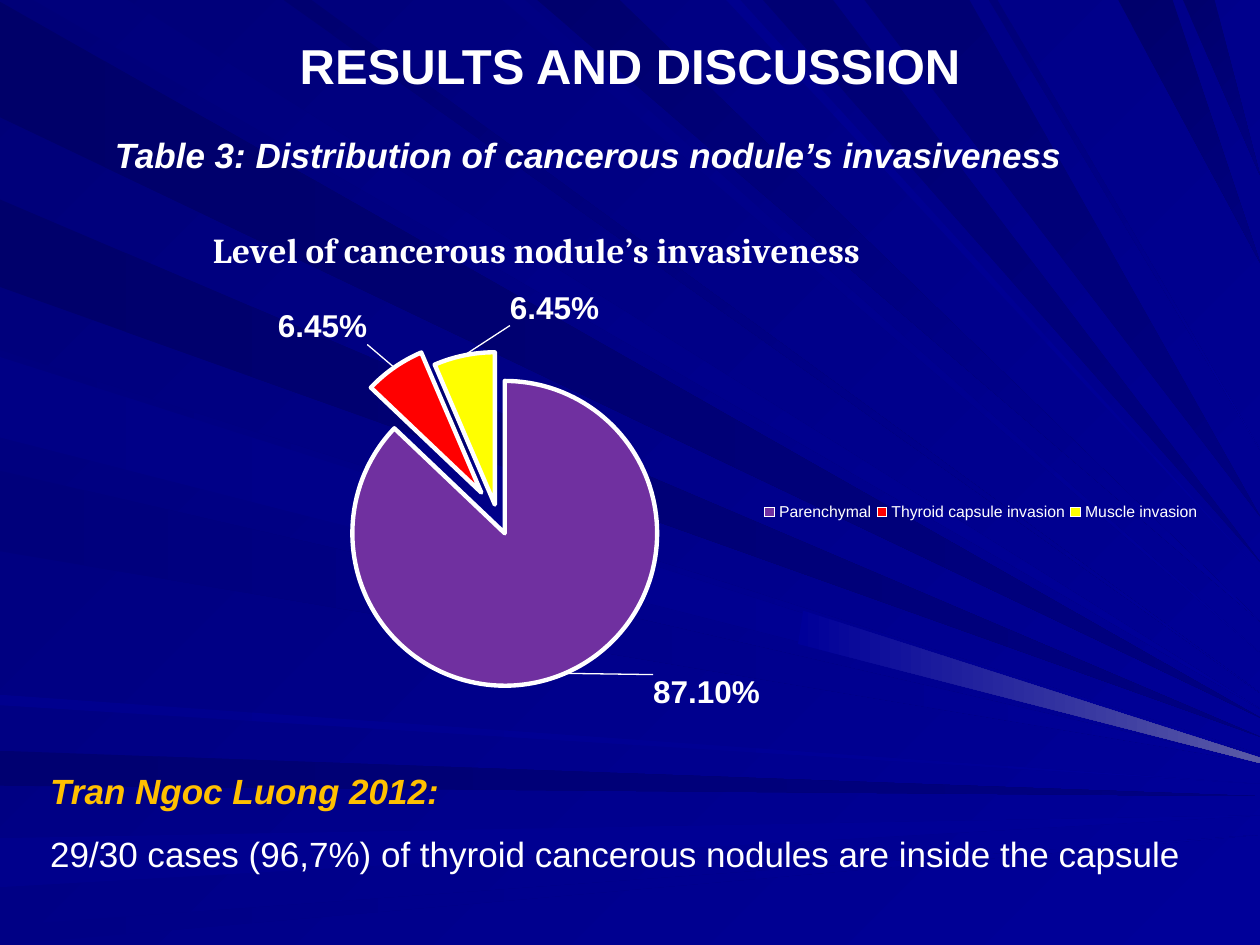
from lxml import etree
from pptx import Presentation
from pptx.chart.data import CategoryChartData as ChartData
from pptx.dml.color import RGBColor
from pptx.enum.chart import XL_CHART_TYPE as ChartType
from pptx.enum.chart import XL_LABEL_POSITION as LabelPosition
from pptx.enum.chart import XL_LEGEND_POSITION as LegendPosition
from pptx.enum.text import MSO_ANCHOR as Anchor
from pptx.enum.text import PP_ALIGN as Align
from pptx.oxml import parse_xml
from pptx.oxml.ns import qn
from pptx.util import Pt

WHITE = "FFFFFF"
NAVY, BLUE = "000080", "000099"
WIDTH, HEIGHT = 720, 540
LEFT_RAYS = [
    (1, 67, 410, "000069", NAVY),
    (114, 164, 421, "00006B", NAVY),
    (200, 246, 431, "00007E", BLUE),
    (269, 315, 436, "00007B", BLUE),
    (397, 403, 448, "00008E", BLUE),
    (429, 449, 455, "000071", NAVY),
    (479, 507, 466, "00008C", BLUE),
    (529, 540, 477, "000085", BLUE),
    (204, 250, 434, "000085", BLUE),
]
TOP_RAYS = [
    (19, 73, 405, "00007B", BLUE),
    (162, 178, 396, "000070", BLUE),
    (287, 300, 373, "000083", BLUE),
    (307, 354, 355, "00006D", BLUE),
    (415, 423, 327, "00008E", BLUE),
    (436, 476, 321, "000073", NAVY),
    (494, 554, 295, "000073", NAVY),
    (565, 570, 257, "000078", BLUE),
    (639, 670, 150, "00006B", NAVY),
    (676, 694, 100, "00006D", NAVY),
]
BEAM = [(456, 368), (459, 349), (720, 433), (720, 436)]
SLICES = [
    ("Parenchymal", 0.871, "7030A0", 13, (0.075, -0.01)),
    ("Thyroid capsule invasion", 0.0645, "FF0000", 18, (-0.02, -0.03)),
    ("Muscle invasion", 0.0645, "FFFF00", 7, (0.12, -0.04)),
]


def color(value):
    """Turn a hex string into a colour."""
    return RGBColor.from_string(value)


def paint(fill, start, end=None, angle=0):
    """Fill with one colour, or with a gradient turned clockwise by angle."""
    if end is None:
        fill.solid()
        fill.fore_color.rgb = color(start)
        return
    fill.gradient()
    fill.gradient_angle = (360 - angle) % 360
    for stop, value in zip(fill.gradient_stops, (start, end)):
        stop.color.rgb = color(value)


def style(font, size, name="Arial", value=WHITE, bold=False, italic=False):
    """Set all the properties of a font."""
    font.size, font.name, font.bold, font.italic = Pt(size), name, bold, italic
    font.color.rgb = color(value)


def add_ray(shapes, points, start, end, angle=0):
    """Draw one light ray of the backdrop."""
    builder = shapes.build_freeform(*points[0], scale=Pt(1))
    builder.add_line_segments(points[1:], close=True)
    ray = builder.convert_to_shape()
    ray.shadow.inherit = False
    ray.line.fill.background()
    paint(ray.fill, start, end, angle)


def add_backdrop(page):
    """Draw rays that narrow from the left and top edges to the right edge."""
    paint(page.background.fill, "000078", BLUE, 45)
    shapes = page.shapes.add_group_shape().shapes
    for near, far, tip, start, end in TOP_RAYS:
        add_ray(shapes, [(near, 0), (far, 0), (WIDTH, tip)], start, end, 45)
    for near, far, tip, start, end in LEFT_RAYS:
        add_ray(shapes, [(0, near), (0, far), (WIDTH, tip)], start, end)
    add_ray(shapes, BEAM, BLUE, "5A5AA6")


def add_text(page, place, lines, align=Align.LEFT, spacing=1.0, anchor=Anchor.TOP, bottom=3.6):
    """Add a text box with one styled paragraph for each line."""
    box = page.shapes.add_textbox(*map(Pt, place))
    frame = box.text_frame
    frame.word_wrap = True
    frame.vertical_anchor = anchor
    frame.margin_bottom = Pt(bottom)
    frame.text = "\n".join(text for text, _ in lines)
    for para, (_, look) in zip(frame.paragraphs, lines):
        para.alignment, para.line_spacing = align, spacing
        style(para.runs[0].font, **look)


def chart_xml(tag, **attributes):
    """Make an empty chart element."""
    element = etree.Element(qn(f"c:{tag}"))
    for name, value in attributes.items():
        element.set(name, str(value))
    return element


def set_layout(parent, index, **values):
    """Give a chart part a manual layout as its child at index."""
    for old in parent.findall(qn("c:layout")):
        parent.remove(old)
    layout = chart_xml("layout")
    manual = chart_xml("manualLayout")
    layout.append(manual)
    for tag, value in values.items():
        manual.append(chart_xml(tag, val=value))
    parent.insert(index, layout)


def add_leader_lines(labels):
    """Show thin white lines from the labels to their slices."""
    for old in labels.findall(qn("c:showLeaderLines")):
        labels.remove(old)
    labels.append(chart_xml("showLeaderLines", val=1))
    labels.append(parse_xml(
        '<c:leaderLines xmlns:c="http://schemas.openxmlformats.org/drawingml/2006/chart" '
        'xmlns:a="http://schemas.openxmlformats.org/drawingml/2006/main"><c:spPr><a:ln w="9525">'
        f'<a:solidFill><a:srgbClr val="{WHITE}"/></a:solidFill></a:ln></c:spPr></c:leaderLines>'))


def style_labels(labels):
    """Show the values in large bold type."""
    labels.show_value = True
    labels.number_format = "0.00%"
    labels.number_format_is_linked = False
    labels.position = LabelPosition.BEST_FIT
    style(labels.font, 18, bold=True)


def style_slices(series, root):
    """Colour the slices, pull them out and move their labels."""
    for index, (_, _, value, _, _) in enumerate(SLICES):
        point = series.points[index]
        paint(point.format.fill, value)
        point.format.line.width = Pt(2.5)
        point.format.line.color.rgb = color(WHITE)
        style(point.data_label.font, 18, bold=True)
        point.data_label.position = LabelPosition.BEST_FIT
    parts = zip(SLICES, root.iter(qn("c:dPt")), root.iter(qn("c:dLbl")))
    for (*_, explosion, (x, y)), part, label in parts:
        part.find(qn("c:spPr")).addprevious(chart_xml("explosion", val=explosion))
        set_layout(label, 1, x=x, y=y)


def add_pie(page, place):
    """Add the pie chart of invasiveness."""
    data = ChartData(number_format="0.00%")
    data.categories = [name for name, *_ in SLICES]
    data.add_series("Series 1", [share for _, share, *_ in SLICES])
    chart = page.shapes.add_chart(ChartType.PIE, *map(Pt, place), data).chart
    style(chart.font, 10)
    chart.has_title = True
    chart.chart_title.text_frame.text = "Level of cancerous nodule’s invasiveness"
    style(chart.chart_title.text_frame.paragraphs[0].runs[0].font, 20, "Cambria", bold=True)
    chart.has_legend = True
    chart.legend.position = LegendPosition.RIGHT
    chart.legend.include_in_layout = False
    style(chart.legend.font, 9)

    plot, root = chart.plots[0], chart.element
    plot.vary_by_categories = True
    series = plot.series[0]
    style_labels(series.data_labels)
    style_slices(series, root)
    add_leader_lines(root.find(f".//{qn('c:ser')}/{qn('c:dLbls')}"))
    edges = {"xMode": "edge", "yMode": "edge"}
    set_layout(root.find(f".//{qn('c:title')}"), 1, **edges, x=0.125, y=0.06)
    set_layout(root.find(f".//{qn('c:legend')}"), 1, **edges, x=0.61, y=0.55, w=0.39, h=0.05)
    set_layout(root.find(f".//{qn('c:plotArea')}"), 0, layoutTarget="inner", **edges,
               x=0.09, y=0.31, w=0.58, h=0.54)


def main():
    """Build and save the slide."""
    deck = Presentation()
    deck.slide_width, deck.slide_height = Pt(WIDTH), Pt(HEIGHT)
    page = deck.slides.add_slide(deck.slide_layouts[6])
    add_backdrop(page)
    add_text(page, (0, 0, WIDTH, 104.4), [("RESULTS AND DISCUSSION", {"size": 28, "bold": True})],
             Align.CENTER, anchor=Anchor.MIDDLE, bottom=34)
    emphasis = {"size": 20, "bold": True, "italic": True}
    add_text(page, (42.5, 72.7, 587.5, 31.7),
             [("Table 3: Distribution of cancerous nodule’s invasiveness", emphasis)],
             Align.CENTER, anchor=Anchor.MIDDLE)
    add_pie(page, (36.7, 107.3, 650.9, 322.6))
    add_text(page, (21.6, 424.1, 689, 79.9), [
        ("Tran Ngoc Luong 2012:", {**emphasis, "value": "FFC000"}),
        ("29/30 cases (96,7%) of thyroid cancerous nodules are inside the capsule", {"size": 20}),
    ], spacing=1.5)
    deck.save("out.pptx")


if __name__ == "__main__":
    main()
